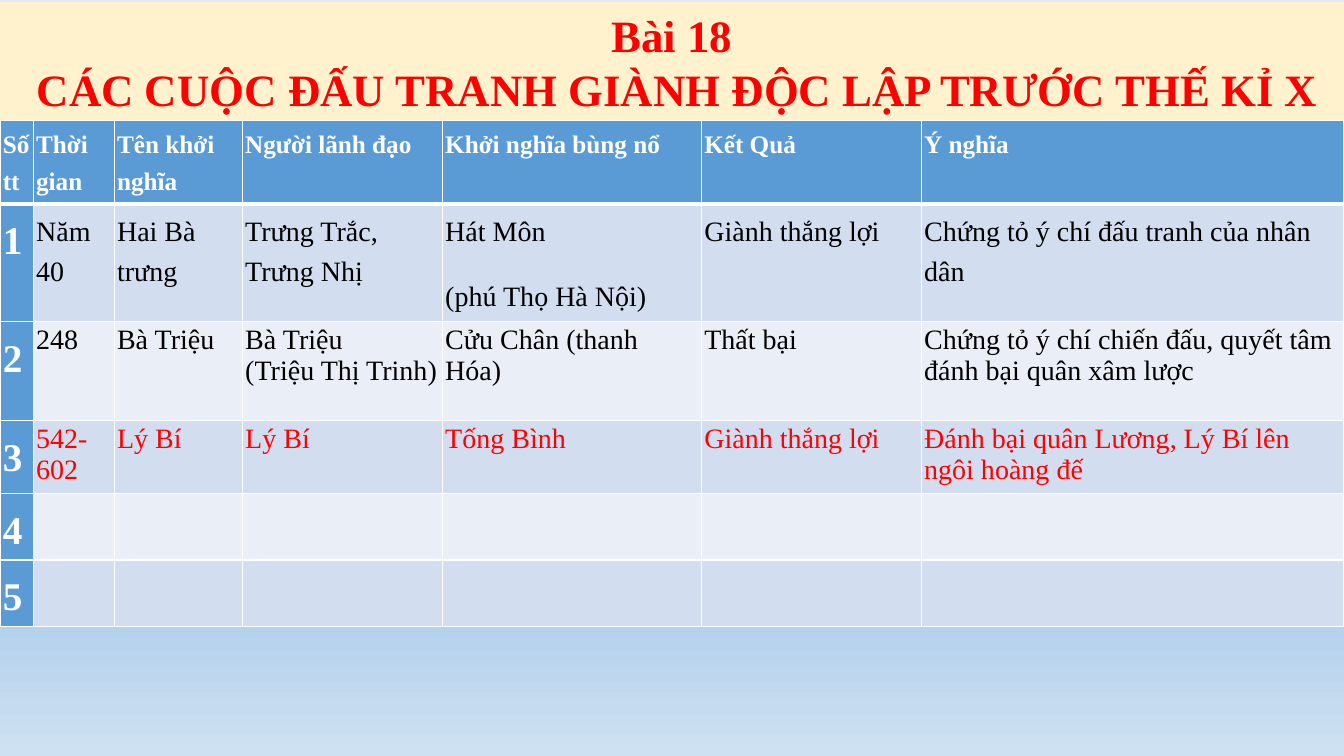
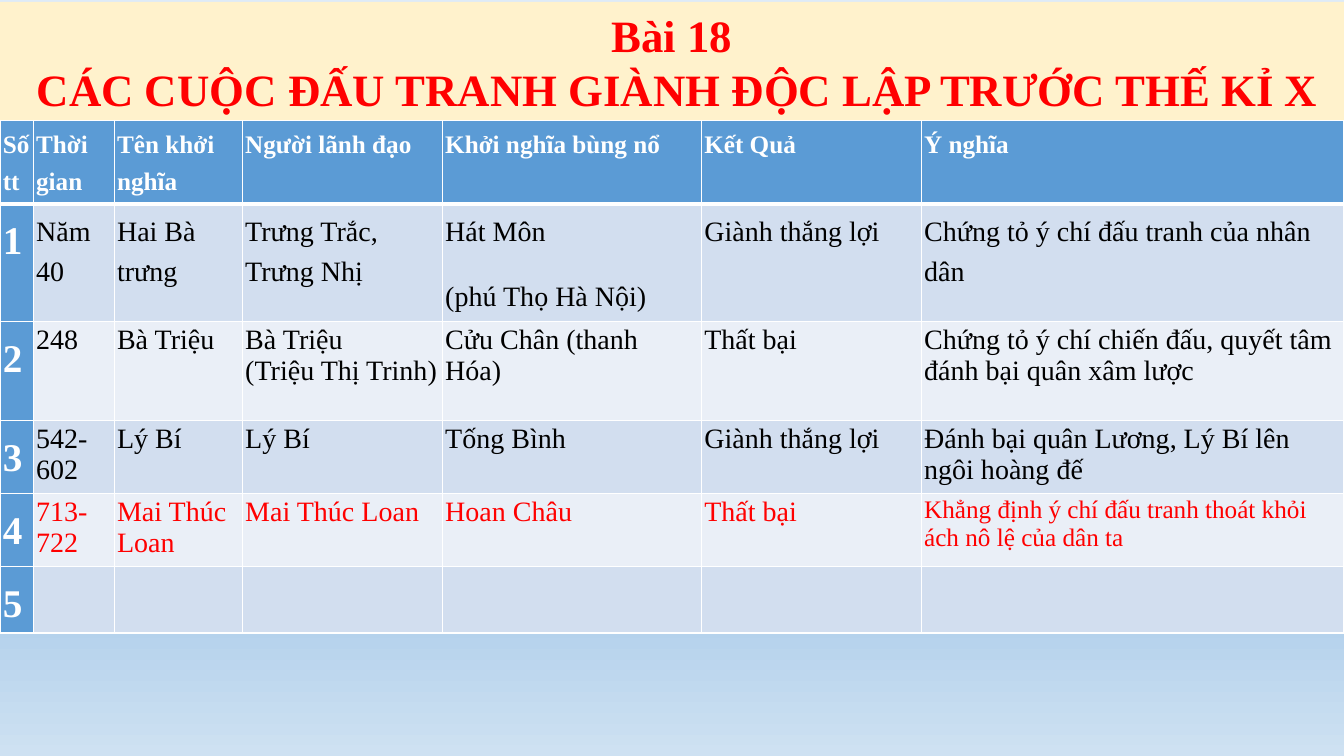
import dataclasses

import lxml.etree
import pptx
import pptx.dml.color
import pptx.enum.shapes
import pptx.enum.text
import pptx.oxml.ns
import pptx.util

Cm = pptx.util.Cm
Pt = pptx.util.Pt
qn = pptx.oxml.ns.qn


@dataclasses.dataclass(frozen=True)
class Theme:
    font: str = "Times New Roman"
    # Colours
    accent: str = "5B9BD5"
    band_odd: str = "D2DEEF"
    band_even: str = "EAEFF7"
    title_band: str = "FFF2CC"
    highlight: str = "FF0000"
    text: str = "000000"
    white: str = "FFFFFF"
    background: tuple = ((0, "DEEBF7"), (74, "B5D2EC"), (83, "B5D2EC"), (100, "CEE1F2"))
    # Type sizes and line widths in points
    title_size: int = 32
    number_size: int = 28
    body_size: int = 20
    small_size: int = 18
    thin_line: int = 1
    thick_line: int = 3


THEME = Theme()
SLIDE_WIDTH, SLIDE_HEIGHT = Cm(33.87), Cm(19.05)

# Table content
TITLE = "Bài 18\n CÁC CUỘC ĐẤU TRANH GIÀNH ĐỘC LẬP TRƯỚC THẾ KỈ X"
HEADERS = ("Số tt", "Thời gian", "Tên khởi nghĩa", "Người lãnh đạo",
           "Khởi nghĩa bùng nổ", "Kết Quả", "Ý nghĩa")
UPRISINGS = (
    ("Năm 40", "Hai Bà trưng", "Trưng Trắc, Trưng Nhị", "Hát Môn\n(phú Thọ Hà Nội)",
     "Giành thắng lợi", "Chứng tỏ ý chí đấu tranh của nhân dân"),
    ("248", "Bà Triệu", "Bà Triệu\n(Triệu Thị Trinh)", "Cửu Chân (thanh Hóa)",
     "Thất bại", "Chứng tỏ ý chí chiến đấu, quyết tâm đánh bại quân xâm lược"),
    ("542- 602", "Lý Bí", "Lý Bí", "Tống Bình",
     "Giành thắng lợi", "Đánh bại quân Lương, Lý Bí lên ngôi hoàng đế"),
    ("713-722", "Mai Thúc Loan", "Mai Thúc Loan", "Hoan Châu",
     "Thất bại", "Khẳng định ý chí đấu tranh thoát khỏi ách nô lệ của dân ta"),
)
SMALL_CELLS = {(4, 6)}
UPRISING_ROWS = 5

# Table measures in centimetres
COLUMN_WIDTHS = (0.84, 2.04, 3.23, 5.04, 6.53, 5.54, 10.65)
HEADER_HEIGHT = 2.11
FILLED_HEIGHTS = (2.97, 2.49, 1.83, 1.84)
EMPTY_HEIGHT = 1.68
CELL_MARGIN = 0.07


def rgb(value):
    return pptx.dml.color.RGBColor.from_string(value)


def paint(target, colour):
    target.fill.solid()
    target.fill.fore_color.rgb = rgb(colour)


def format_text(text_frame, size, colour, bold):
    for paragraph in text_frame.paragraphs:
        for run in paragraph.runs:
            run.font.name = THEME.font
            run.font.size = Pt(size)
            run.font.bold = bold
            run.font.color.rgb = rgb(colour)


def set_background(master):
    """Give all slides the same vertical gradient."""
    fill = master.background.fill
    fill.gradient()
    fill.gradient_angle = 270
    stops = master.element.find(".//" + qn("p:bg")).find(".//" + qn("a:gsLst"))
    for stop in list(stops):
        stops.remove(stop)
    for position, colour in THEME.background:
        stop = lxml.etree.SubElement(stops, qn("a:gs"), pos=str(position * 1000))
        lxml.etree.SubElement(stop, qn("a:srgbClr"), val=colour)


def add_title_band(slide):
    band = slide.shapes.add_shape(pptx.enum.shapes.MSO_SHAPE.RECTANGLE,
                                  0, Cm(0.05), SLIDE_WIDTH, Cm(3))
    band.shadow.inherit = False
    paint(band, THEME.title_band)
    band.line.fill.background()
    text_frame = band.text_frame
    text_frame.word_wrap = True
    text_frame.vertical_anchor = pptx.enum.text.MSO_ANCHOR.MIDDLE
    text_frame.text = TITLE
    for paragraph in text_frame.paragraphs:
        paragraph.alignment = pptx.enum.text.PP_ALIGN.CENTER
    format_text(text_frame, THEME.title_size, THEME.highlight, True)


def set_borders(cell, top, bottom):
    """Draw white borders; top and bottom widths are in points."""
    properties = cell._tc.get_or_add_tcPr()
    widths = {"lnL": THEME.thin_line, "lnR": THEME.thin_line, "lnT": top, "lnB": bottom}
    for side, width in widths.items():
        line = lxml.etree.SubElement(properties, qn("a:" + side), w=str(Pt(width)))
        fill = lxml.etree.SubElement(line, qn("a:solidFill"))
        lxml.etree.SubElement(fill, qn("a:srgbClr"), val=THEME.white)


def cell_text(row, column, shown):
    if row == 0:
        return HEADERS[column]
    if column == 0:
        return str(row)
    return UPRISINGS[row - 1][column - 1] if row <= shown else ""


def cell_style(row, column, shown):
    """Return fill, text size, text colour and bold for one cell."""
    if row == 0:
        return THEME.accent, THEME.small_size, THEME.white, True
    if column == 0:
        return THEME.accent, THEME.number_size, THEME.white, True
    fill = THEME.band_odd if row % 2 else THEME.band_even
    size = THEME.small_size if (row, column) in SMALL_CELLS else THEME.body_size
    colour = THEME.highlight if row == shown else THEME.text
    return fill, size, colour, False


def fill_cell(cell, row, column, shown):
    fill, size, colour, bold = cell_style(row, column, shown)
    set_borders(cell,
                THEME.thick_line if row == 1 else THEME.thin_line,
                THEME.thick_line if row == 0 else THEME.thin_line)
    paint(cell, fill)
    cell.margin_left = cell.margin_right = Cm(CELL_MARGIN)
    cell.margin_top = cell.margin_bottom = Cm(CELL_MARGIN)
    cell.text_frame.text = cell_text(row, column, shown)
    format_text(cell.text_frame, size, colour, bold)
    # The first two rows and the number column are set with open spacing
    if row <= 1 or column == 0:
        for paragraph in cell.text_frame.paragraphs:
            paragraph.line_spacing = 1.3
            paragraph.space_before = Pt(3)
            paragraph.space_after = Pt(15)


def add_uprising_table(slide, shown):
    """Add the table with the first `shown` uprisings, the newest highlighted."""
    heights = ((HEADER_HEIGHT,) + FILLED_HEIGHTS[:shown]
               + (EMPTY_HEIGHT,) * (UPRISING_ROWS - shown))
    frame = slide.shapes.add_table(len(heights), len(COLUMN_WIDTHS), 0, Cm(3.03),
                                   SLIDE_WIDTH, Cm(sum(heights)))
    table = frame.table
    table.first_col = True
    for column, width in zip(table.columns, COLUMN_WIDTHS):
        column.width = Cm(width)
    for row_index, height in enumerate(heights):
        row = table.rows[row_index]
        row.height = Cm(height)
        for column_index, cell in enumerate(row.cells):
            fill_cell(cell, row_index, column_index, shown)


def main():
    presentation = pptx.Presentation()
    presentation.slide_width, presentation.slide_height = SLIDE_WIDTH, SLIDE_HEIGHT
    set_background(presentation.slide_master)
    blank_layout = presentation.slide_layouts[6]
    for shown in (3, 4):
        slide = presentation.slides.add_slide(blank_layout)
        add_title_band(slide)
        add_uprising_table(slide, shown)
    presentation.save("out.pptx")


if __name__ == "__main__":
    main()
